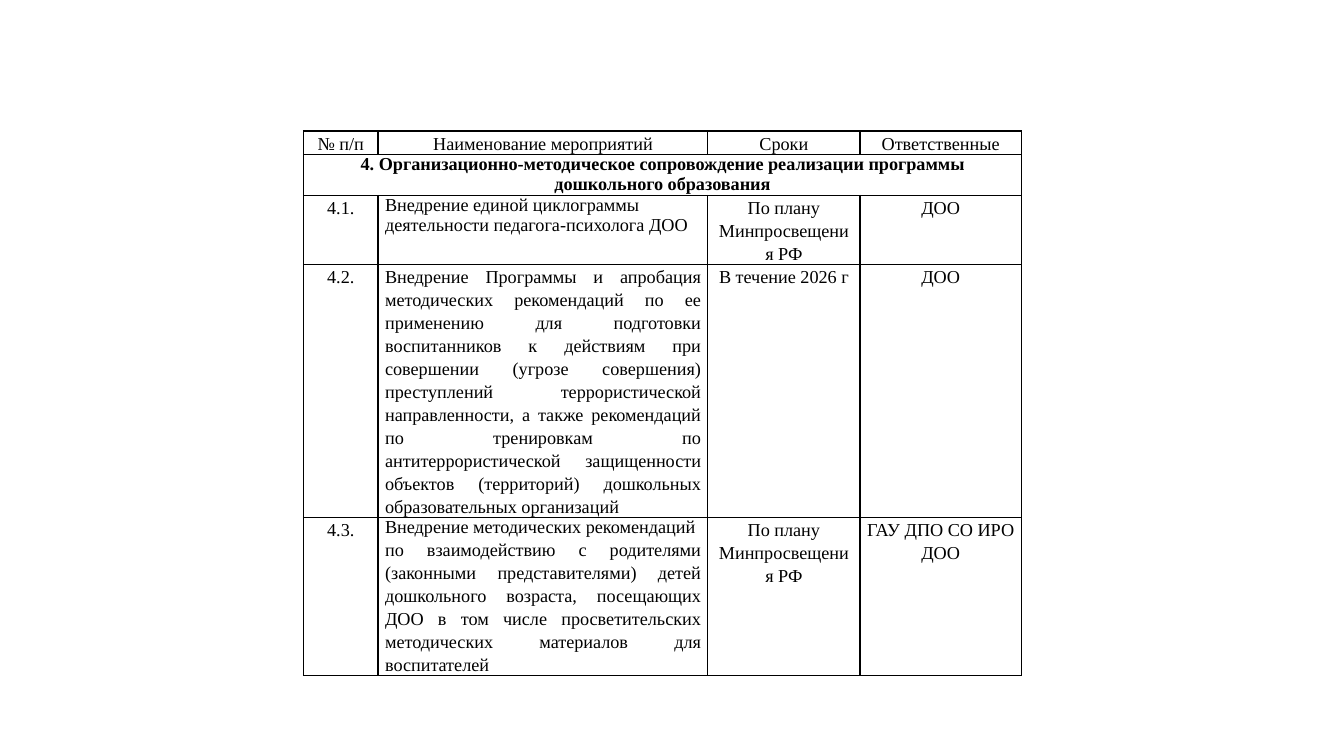
from lxml import etree
from pptx import Presentation
from pptx.dml.color import RGBColor
from pptx.enum import text
from pptx.oxml import ns
from pptx.util import Inches, Pt

BLACK = RGBColor(0, 0, 0)
FONT = "Times New Roman"
CENTER, LEFT, JUSTIFY = text.PP_ALIGN.CENTER, text.PP_ALIGN.LEFT, text.PP_ALIGN.JUSTIFY
COLUMN_SHARES = (0.74, 3.27, 1.51, 1.6)
ROW_HEIGHTS = (0.23, 0.41, 0.68, 2.51, 1.57)
HEADERS = ("№ п/п", "Наименование мероприятий", "Сроки", "Ответственные")
SECTION = ("4. Организационно-методическое сопровождение реализации "
           "программы дошкольного образования")
MINISTRY_PLAN = "По плану Минпросвещения РФ"
ACTIVITIES = (
    ("4.1.",
     [("Внедрение единой циклограммы деятельности педагога-психолога ДОО", LEFT, 1.0)],
     MINISTRY_PLAN, "ДОО"),
    ("4.2.",
     [("Внедрение Программы и апробация методических рекомендаций по ее применению "
       "для подготовки воспитанников к действиям при совершении (угрозе совершения) "
       "преступлений террористической направленности, а также рекомендаций по "
       "тренировкам по антитеррористической защищенности объектов (территорий) "
       "дошкольных образовательных организаций", JUSTIFY, 1.15)],
     "В течение 2026 г", "ДОО"),
    ("4.3.",
     [("Внедрение методических рекомендаций", JUSTIFY, 1.0),
      ("по взаимодействию с родителями (законными представителями) детей дошкольного "
       "возраста, посещающих ДОО в том числе просветительских методических материалов "
       "для воспитателей", JUSTIFY, 1.15)],
     MINISTRY_PLAN, "ГАУ ДПО СО ИРО\nДОО"),
)


def add_borders(cell):
    properties = cell._tc.get_or_add_tcPr()
    for side in ("lnL", "lnR", "lnT", "lnB"):
        line = etree.SubElement(properties, ns.qn(f"a:{side}"), w=str(Pt(1)))
        fill = etree.SubElement(line, ns.qn("a:solidFill"))
        etree.SubElement(fill, ns.qn("a:srgbClr"), val=str(BLACK))


def format_cell(cell):
    add_borders(cell)
    cell.fill.background()
    cell.margin_left = cell.margin_right = Inches(0.07)
    cell.margin_top = cell.margin_bottom = 0


def write_cell(cell, lines, bold=False):
    frame = cell.text_frame
    frame.text = "\n".join(line for line, _, _ in lines)
    for paragraph, (_, alignment, spacing) in zip(frame.paragraphs, lines):
        paragraph.alignment = alignment
        paragraph.line_spacing = spacing
        paragraph.font.name = FONT
        paragraph.font.size = Pt(13)
        paragraph.font.bold = bold
        paragraph.font.color.rgb = BLACK


def centered(content):
    return [(line, CENTER, 1.15) for line in content.split("\n")]


def add_plan_table(slide, left, top, width):
    height = sum(ROW_HEIGHTS)
    table = slide.shapes.add_table(
        len(ROW_HEIGHTS), len(COLUMN_SHARES),
        Inches(left), Inches(top), Inches(width), Inches(height)).table
    table.first_row = table.horz_banding = False
    for column, share in zip(table.columns, COLUMN_SHARES):
        column.width = Inches(width * share / sum(COLUMN_SHARES))
    for row, row_height in zip(table.rows, ROW_HEIGHTS):
        row.height = Inches(row_height)
        for cell in row.cells:
            format_cell(cell)
            write_cell(cell, centered(""))

    for column, header in enumerate(HEADERS):
        write_cell(table.cell(0, column), centered(header))
    section = table.cell(1, 0)
    section.merge(table.cell(1, len(HEADERS) - 1))
    write_cell(section, [(SECTION, CENTER, 1.0)], bold=True)
    for row, (number, activity, term, responsible) in enumerate(ACTIVITIES, 2):
        contents = (centered(number), activity, centered(term), centered(responsible))
        for column, lines in enumerate(contents):
            write_cell(table.cell(row, column), lines)


def main():
    presentation = Presentation()
    presentation.slide_width = Inches(13.33)
    presentation.slide_height = Inches(7.5)
    slide = presentation.slides.add_slide(presentation.slide_layouts[6])
    add_plan_table(slide, 3.01, 1.3, 7.12)
    presentation.save("out.pptx")


if __name__ == "__main__":
    main()
